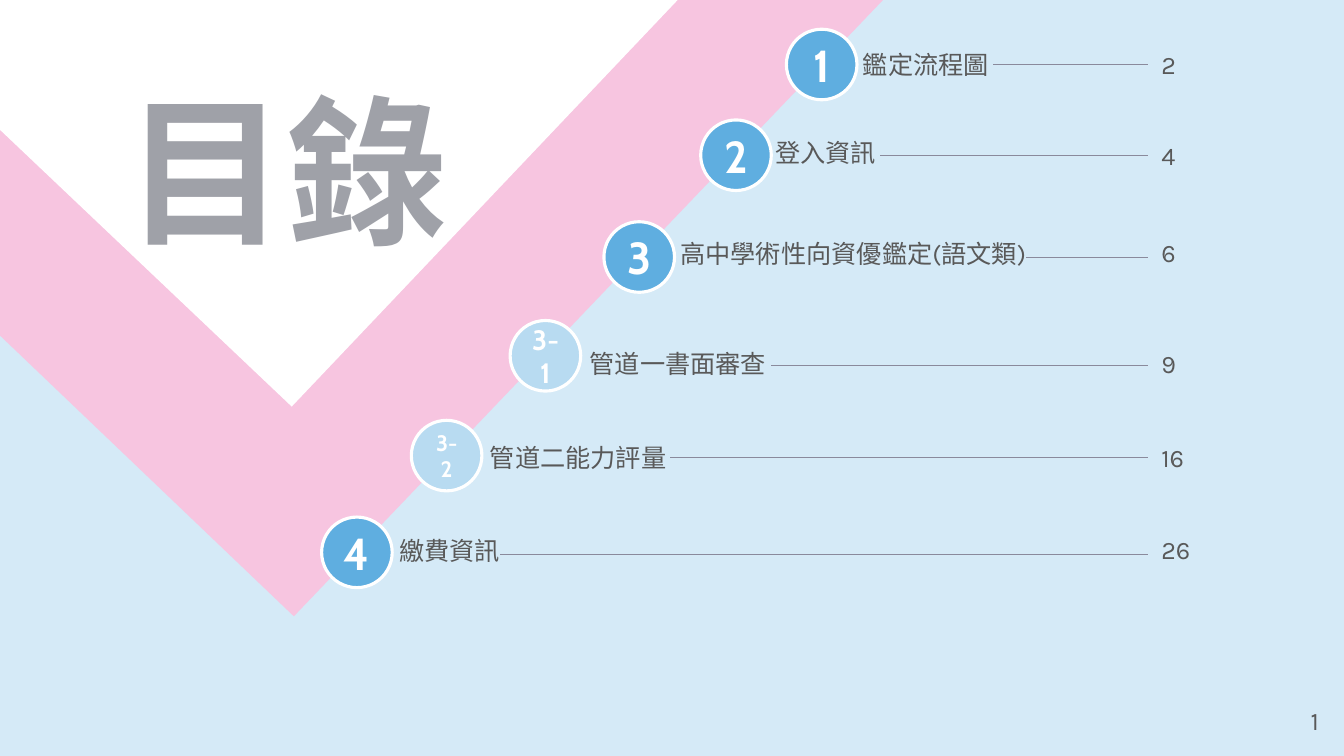
from lxml.etree import SubElement
from pptx import Presentation
from pptx.dml.color import RGBColor as Color
from pptx.enum.shapes import MSO_CONNECTOR as Connector, MSO_SHAPE as Shape
from pptx.enum.text import MSO_ANCHOR as Anchor, MSO_AUTO_SIZE as AutoSize, PP_ALIGN as Align
from pptx.oxml.ns import qn
from pptx.util import Inches, Pt

COLORS = {
    "sky": "D5EAF7", "pink": "F7C5E0", "white": "FFFFFF", "rule": "8A8A9C",
    "text": "595959", "title": "9FA1A8", "chapter": "5FAEE0", "section": "B8DBF1",
}
ASIAN_FONT = "Noto Sans CJK SC"
BADGE_SIZE = 0.7
RULE_END = 11.39
PAGE_LEFT = 11.42
TEXT_HEIGHT = 0.4

CONTENTS = [
    (("1", 7.8, 0.29, 32, "chapter"), ("鑑定流程圖", 8.46, 0.44, 1.52), (9.85, 0.64), ("2", 0.44)),
    (("2", 6.95, 1.19, 32, "chapter"), ("登入資訊", 7.59, 1.31, 1.52), (8.73, 1.54), ("4", 1.34)),
    (("3", 5.99, 2.2, 32, "chapter"), ("高中學術性向資優鑑定(語文類)", 6.65, 2.32, 3.74), (10.18, 2.55), ("6", 2.31)),
    (("3-1", 5.06, 3.18, 20, "section"), ("管道一書面審查", 5.75, 3.41, 2.23), (7.65, 3.62), ("9", 3.41)),
    (("3-2", 4.08, 4.17, 16, "section"), ("管道二能力評量", 4.76, 4.34, 2.23), (6.65, 4.54), ("16", 4.34)),
    (("4", 3.19, 5.13, 32, "chapter"), ("繳費資訊", 3.86, 5.26, 1.8), (4.96, 5.5), ("26", 5.25)),
]


class ContentsPage:
    """Holds the style and the current slide, and draws each kind of element."""

    def __init__(self, deck):
        self.page = deck.slides.add_slide(deck.slide_layouts[5])
        self.shapes = self.page.shapes
        background = self.page.background.fill
        background.solid()
        background.fore_color.rgb = self.color("sky")

    def color(self, name):
        return Color.from_string(COLORS[name])

    def set_text(self, box, text, size, color, font="Karla", bold=False,
                 align=Align.LEFT, frame_format=None):
        frame = box.text_frame
        frame_values = {"word_wrap": True, "auto_size": AutoSize.NONE, "vertical_anchor": Anchor.TOP}
        for name, value in {**frame_values, **(frame_format or {})}.items():
            setattr(frame, name, value)
        para = frame.paragraphs[0]
        para.alignment = align
        span = para.add_run()
        span.text = text
        for name, value in {"name": font, "size": Pt(size), "bold": bold}.items():
            setattr(span.font, name, value)
        span.font.color.rgb = self.color(color)
        SubElement(span.font._element, qn("a:ea"), typeface=ASIAN_FONT)
        return para

    def shape(self, kind, left, top, width, height, color):
        shape = self.shapes.add_shape(kind, Inches(left), Inches(top), Inches(width), Inches(height))
        shape.shadow.inherit = False
        shape.fill.solid()
        shape.fill.fore_color.rgb = self.color(color)
        shape.line.fill.background()
        return shape

    def band(self, left, top, width, height, color, rotation):
        self.shape(Shape.RECTANGLE, left, top, width, height, color).rotation = rotation

    def title(self, text, left, top, width, height):
        title = self.shapes.title
        place = {"left": left, "top": top, "width": width, "height": height}
        for name, value in place.items():
            setattr(title, name, Inches(value))
        para = self.set_text(title, text, 115, "title", ASIAN_FONT, True, Align.CENTER)
        para.line_spacing = 0.9
        para.space_before = Pt(0)
        self.shapes._spTree.append(title._element)

    def badge(self, label, left, top, size, color):
        badge = self.shape(Shape.OVAL, left, top, BADGE_SIZE, BADGE_SIZE, color)
        badge.line.color.rgb = self.color("white")
        badge.line.width = Pt(2.25)
        self.set_text(badge, label, size, "white", "Cabin", True, Align.CENTER,
                      {"vertical_anchor": Anchor.MIDDLE})

    def rule(self, left, y):
        rule = self.shapes.add_connector(
            Connector.STRAIGHT, Inches(left), Inches(y), Inches(RULE_END), Inches(y))
        rule.line.color.rgb = self.color("rule")
        rule.line.width = Pt(0.5)
        SubElement(rule._element.spPr, qn("a:effectLst"))

    def text(self, text, left, top, width, align=Align.LEFT, frame_format=None):
        box = self.shapes.add_textbox(Inches(left), Inches(top), Inches(width), Inches(TEXT_HEIGHT))
        frame_format = frame_format or {"auto_size": AutoSize.SHAPE_TO_FIT_TEXT}
        self.set_text(box, text, 18, "text", align=align, frame_format=frame_format)


def main():
    deck = Presentation()
    deck.slide_width, deck.slide_height = Inches(13.33), Inches(7.5)
    contents = ContentsPage(deck)
    contents.band(-1.7, -4.68, 8.46, 9.15, "pink", 313.7)
    contents.band(-0.79, -4.54, 8.16, 6.65, "white", 313.5)
    contents.title("目錄", 0.6, 0.88, 4.48, 1.84)
    for badge, entry, rule, (number, top) in CONTENTS:
        contents.badge(*badge)
        contents.rule(*rule)
        contents.text(*entry)
        contents.text(number, PAGE_LEFT, top, 0.51)
    contents.text("1", 10.18, 6.95, 3, Align.RIGHT, {"vertical_anchor": Anchor.MIDDLE})
    deck.save("out.pptx")


if __name__ == "__main__":
    main()
